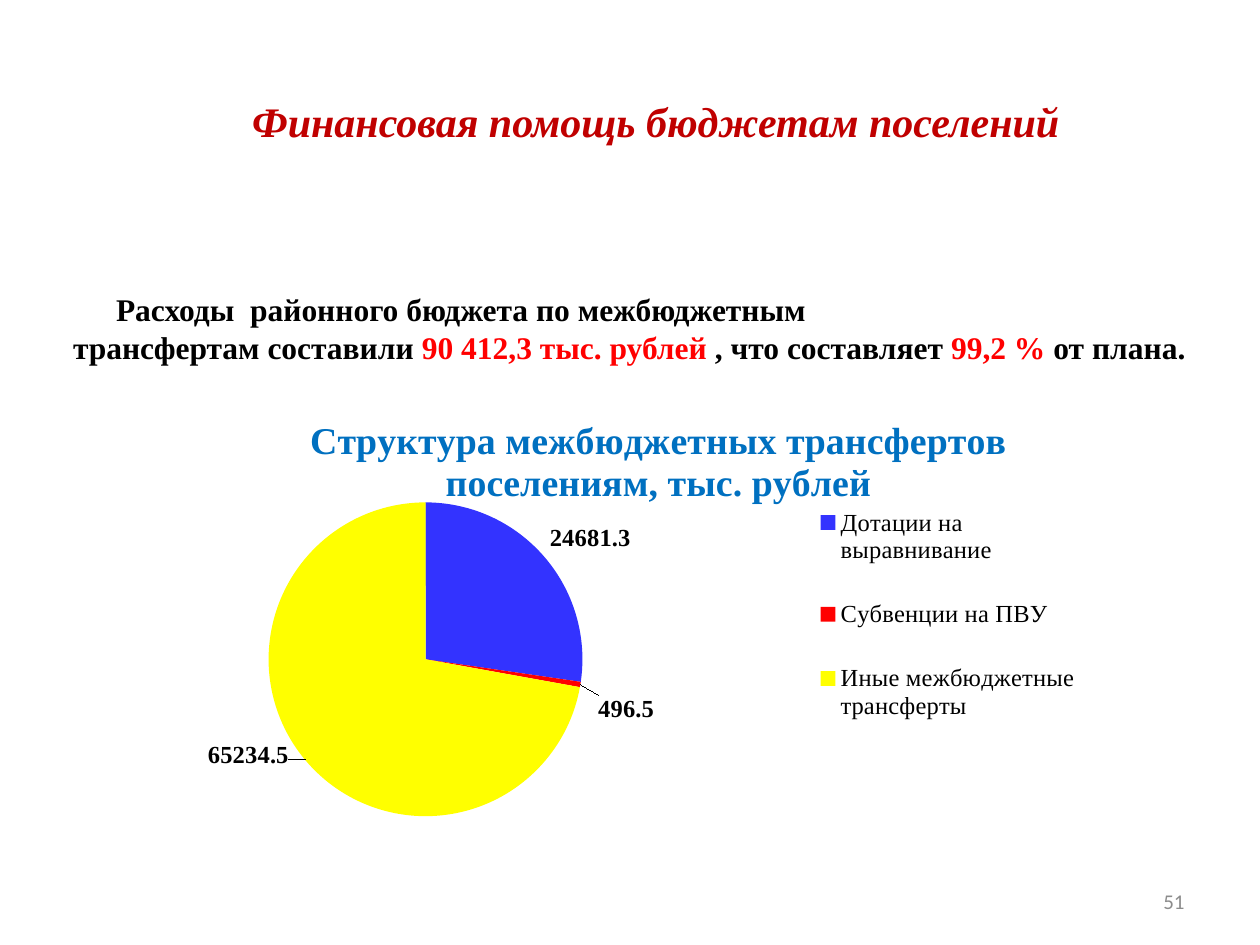
from lxml import etree
from pptx import Presentation
from pptx.chart.data import CategoryChartData
from pptx.dml.color import RGBColor
from pptx.enum.chart import XL_CHART_TYPE, XL_LABEL_POSITION, XL_LEGEND_POSITION
from pptx.enum.text import MSO_ANCHOR, PP_ALIGN
from pptx.oxml.ns import qn
from pptx.util import Cm, Pt

PIE = XL_CHART_TYPE.PIE
OUTSIDE = XL_LABEL_POSITION.OUTSIDE_END
RIGHT_SIDE = XL_LEGEND_POSITION.RIGHT
TOP, MIDDLE = MSO_ANCHOR.TOP, MSO_ANCHOR.MIDDLE
LEFT, CENTER, RIGHT = PP_ALIGN.LEFT, PP_ALIGN.CENTER, PP_ALIGN.RIGHT
SERIF = "Times New Roman"
BLACK, RED = "000000", "FF0000"


def style(font, color, **values):
    font.color.rgb = RGBColor.from_string(color)
    for key, value in values.items():
        setattr(font, key, value)


def place(parent, index, **settings):
    """Give a chart part a manual layout."""
    for old in parent.findall(qn("c:layout")):
        parent.remove(old)
    layout = etree.Element(qn("c:layout"))
    manual = etree.SubElement(layout, qn("c:manualLayout"))
    for key, value in settings.items():
        etree.SubElement(manual, qn(f"c:{key}")).set("val", str(value))
    parent.insert(index, layout)


prs = Presentation()
prs.slide_width, prs.slide_height = Cm(25.4), Cm(19.05)
slide = prs.slides.add_slide(prs.slide_layouts[6])

# Chart of transfers
heading = "Структура межбюджетных трансфертов поселениям, тыс. рублей"
transfers = [
    ("Дотации на выравнивание", 24681.3, "3333FF"),
    ("Субвенции на ПВУ", 496.5, RED),
    ("Иные межбюджетные трансферты", 65234.5, "FFFF00"),
]
data = CategoryChartData(number_format="0.0")
data.categories = [name for name, _, _ in transfers]
data.add_series(heading, [amount for _, amount, _ in transfers])
chart = slide.shapes.add_chart(
    PIE, Cm(2.69), Cm(7.92), Cm(21.18), Cm(9.4), data).chart
style(chart.font, BLACK, size=Pt(18), name="Calibri")
pie = chart.plots[0]
pie.vary_by_categories = True
place(chart._chartSpace.chart.plotArea, 0, layoutTarget="inner",
      xMode="edge", yMode="edge", x=0.01, y=0.235, w=0.536, h=0.673)

# Chart heading
chart.has_title = True
chart.chart_title.include_in_layout = False
chart.chart_title.text_frame.text = heading
heading_run = chart.chart_title.text_frame.paragraphs[0].runs[0]
style(heading_run.font, "0070C0", size=Pt(21.6), name=SERIF, bold=True)

# Legend
chart.has_legend = True
legend = chart.legend
legend.position = RIGHT_SIDE
legend.include_in_layout = False
style(legend.font, BLACK, size=Pt(14), name=SERIF)
place(legend._element, 1, xMode="edge", yMode="edge",
      x=0.64, y=0.17, w=0.27, h=0.61)

# Slices and their values
amounts = pie.series[0]
labels = amounts.data_labels
labels.show_value = True
labels.number_format, labels.number_format_is_linked = "0.0", False
labels.position = OUTSIDE
label_format = dict(color=BLACK, size=Pt(14), name=SERIF, bold=True)
style(labels.font, **label_format)
for i, (_, _, color) in enumerate(transfers):
    fill = amounts.points[i].format.fill
    fill.solid()
    fill.fore_color.rgb = RGBColor.from_string(color)

# Values moved off their slices
for i, x, y in [(1, 0.01, 0.02), (2, -0.01, -0.05)]:
    label = amounts.points[i].data_label
    style(label.font, **label_format)
    label.position = OUTSIDE
    place(labels._element.findall(qn("c:dLbl"))[i - 1], 1, x=x, y=y)

# Texts: box, anchor, format, paragraphs of (alignment, indent, runs)
texts = [
    ((3.1, 1.32, 20.24, 2.21), MIDDLE,
     dict(size=Pt(24), name=SERIF, bold=True, italic=True),
     [(CENTER, 0, [("Финансовая помощь бюджетам поселений", "C00000")])]),
    ((1.09, 5.72, 23.19, 1.8), TOP,
     dict(size=Pt(18), name=SERIF, bold=True),
     [(LEFT, 1, [("Расходы  районного бюджета по межбюджетным", BLACK)]),
      (CENTER, 0, [("трансфертам составили ", BLACK),
                   ("90 412,3 тыс. рублей ", RED),
                   (", что составляет ", BLACK),
                   ("99,2 %", RED),
                   (" от плана.", BLACK)])]),
    ((18.21, 17.65, 5.92, 1.02), MIDDLE,
     dict(size=Pt(12), name="Calibri"),
     [(RIGHT, 0, [("51", "8C8C8C")])]),
]
for box, anchor, text_format, paragraphs in texts:
    frame = slide.shapes.add_textbox(*map(Cm, box)).text_frame
    frame.word_wrap = True
    frame.vertical_anchor = anchor
    for i, (alignment, indent, runs) in enumerate(paragraphs):
        paragraph = frame.add_paragraph() if i else frame.paragraphs[0]
        paragraph.alignment = alignment
        if indent:
            paragraph._p.get_or_add_pPr().set("indent", str(Cm(indent)))
        for words, color in runs:
            run = paragraph.add_run()
            run.text = words
            style(run.font, color, **text_format)

prs.save("out.pptx")
